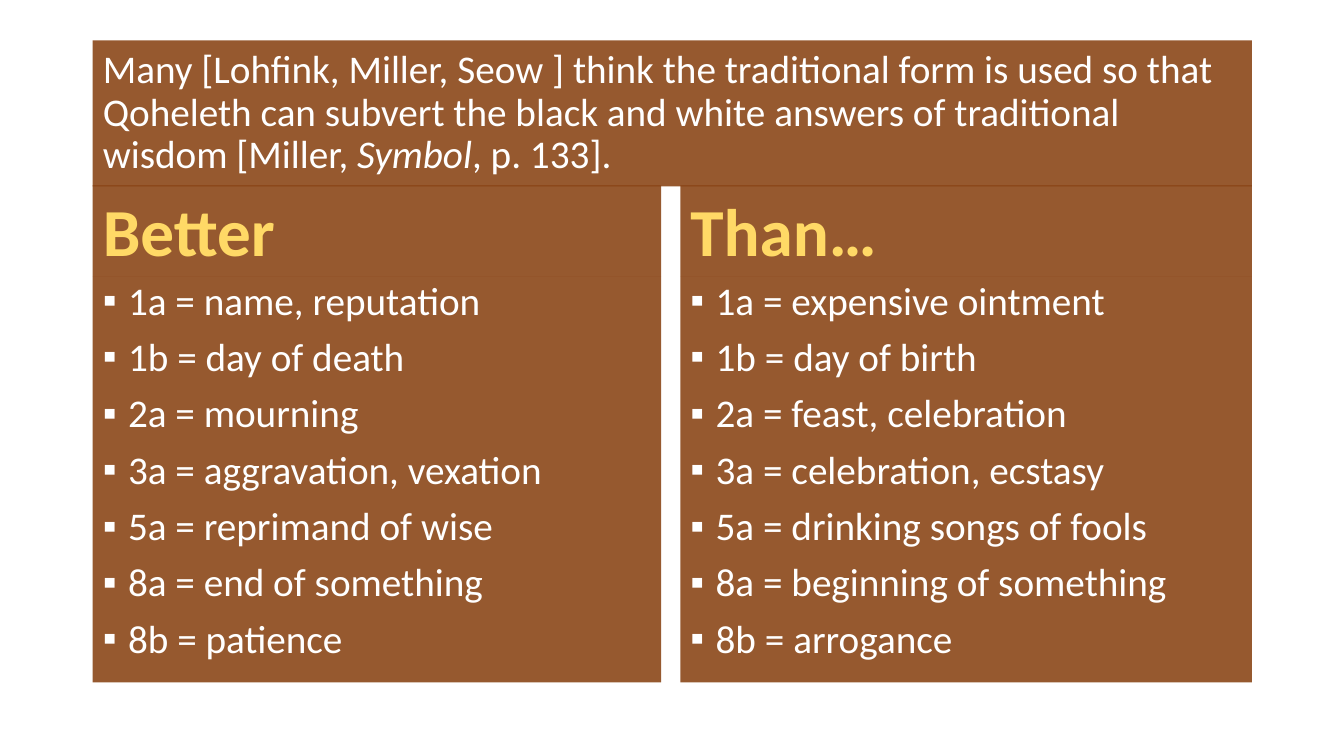
from lxml import etree
from pptx import Presentation
from pptx.dml.color import RGBColor
from pptx.enum.text import MSO_ANCHOR, MSO_AUTO_SIZE, PP_ALIGN
from pptx.oxml.ns import qn
from pptx.util import Pt

TOP, MIDDLE, BOTTOM = MSO_ANCHOR.TOP, MSO_ANCHOR.MIDDLE, MSO_ANCHOR.BOTTOM
NO_AUTOFIT = MSO_AUTO_SIZE.NONE
LEFT = PP_ALIGN.LEFT

BROWN = RGBColor(0x84, 0x3C, 0x0B)
GOLD = RGBColor(0xFF, 0xD9, 0x66)
WHITE = RGBColor(0xFF, 0xFF, 0xFF)
OPACITY = 85
COMPARISON_LAYOUT = 4

# Panel positions in points
MARGIN = 66.24
CLAIM_TOP, CLAIM_HEIGHT, CLAIM_WIDTH = 28.8, 104.4, 828
HEADING_TOP, HEADING_HEIGHT = 132.48, 64.8
LIST_TOP, LIST_HEIGHT = HEADING_TOP + HEADING_HEIGHT, 290.16
INDENT = 18

CLAIM = [
    ("Many [Lohfink, Miller, Seow ] think the traditional form is used so that "
     "Qoheleth can subvert the black and white answers of traditional wisdom "
     "[Miller, ", False),
    ("Symbol", True),
    (", p. 133].", False),
]

# Heading, left, width, heading placeholder, list placeholder, items
COLUMNS = [
    ("Better", MARGIN, 406.08, 1, 2, [
        "1a = name, reputation",
        "1b = day of death",
        "2a = mourning",
        "3a = aggravation, vexation",
        "5a = reprimand of wise",
        "8a = end of something",
        "8b = patience",
    ]),
    ("Than…", 486, 408.24, 3, 4, [
        "1a = expensive ointment",
        "1b = day of birth",
        "2a = feast, celebration",
        "3a = celebration, ecstasy",
        "5a = drinking songs of fools",
        "8a = beginning of something",
        "8b = arrogance",
    ]),
]


def place_panel(panel, left, top, width, height, anchor):
    """Move a placeholder, tint it brown and return its text frame."""
    panel.left, panel.top = Pt(left), Pt(top)
    panel.width, panel.height = Pt(width), Pt(height)
    panel.fill.solid()
    panel.fill.fore_color.rgb = BROWN
    tint = panel.fill._xPr.find(qn("a:solidFill"))[0]
    etree.SubElement(tint, qn("a:alpha"), val=str(OPACITY * 1000))
    frame = panel.text_frame
    frame.word_wrap = True
    frame.auto_size = NO_AUTOFIT
    frame.vertical_anchor = anchor
    return frame


def format_paragraph(paragraph, size, color, bold=False, space_before=0):
    paragraph.alignment = LEFT
    paragraph.line_spacing = 0.9
    paragraph.space_before = Pt(space_before)
    font = paragraph.font
    font.name, font.size, font.bold = "Calibri", Pt(size), bold
    font.color.rgb = color


def add_bullet(paragraph):
    properties = paragraph._p.get_or_add_pPr()
    properties.set("marL", str(Pt(INDENT)))
    properties.set("indent", str(-Pt(INDENT)))
    etree.SubElement(properties, qn("a:buFont"), typeface="Arial")
    etree.SubElement(properties, qn("a:buChar"), char="▪")


def fill_claim(frame):
    paragraph = frame.paragraphs[0]
    for words, italic in CLAIM:
        run = paragraph.add_run()
        run.text = words
        if italic:
            run.font.italic = True
    format_paragraph(paragraph, 28, WHITE)


def fill_heading(frame, heading):
    frame.text = heading
    format_paragraph(frame.paragraphs[0], 48, GOLD, bold=True)


def fill_list(frame, items):
    frame.text = "\n".join(items)
    for number, paragraph in enumerate(frame.paragraphs):
        add_bullet(paragraph)
        format_paragraph(paragraph, 28, WHITE, space_before=10 if number else 0)


def main():
    deck = Presentation()
    deck.slide_width, deck.slide_height = Pt(960), Pt(540)
    slide = deck.slides.add_slide(deck.slide_layouts[COMPARISON_LAYOUT])
    panels = {panel.placeholder_format.idx: panel for panel in slide.placeholders}

    # Claim across the top
    fill_claim(place_panel(slide.shapes.title, MARGIN, CLAIM_TOP,
                           CLAIM_WIDTH, CLAIM_HEIGHT, MIDDLE))

    # Two compared columns
    for heading, left, width, heading_idx, list_idx, items in COLUMNS:
        fill_heading(place_panel(panels[heading_idx], left, HEADING_TOP,
                                 width, HEADING_HEIGHT, BOTTOM), heading)
        fill_list(place_panel(panels[list_idx], left, LIST_TOP,
                              width, LIST_HEIGHT, TOP), items)

    # Unused footer placeholders
    for idx in panels.keys() - {0, 1, 2, 3, 4}:
        panels[idx].element.getparent().remove(panels[idx].element)

    deck.save("out.pptx")


if __name__ == "__main__":
    main()
